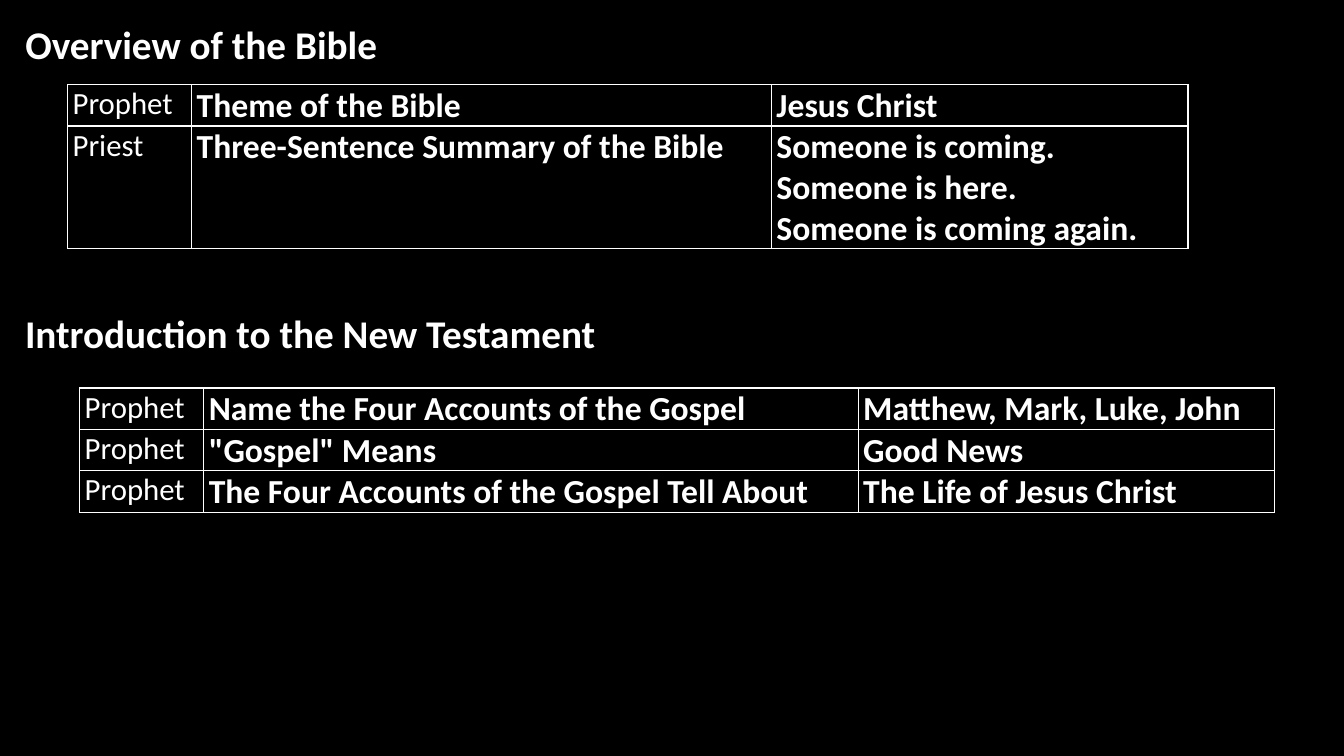
from dataclasses import dataclass

from lxml.etree import SubElement
from pptx import Presentation
from pptx.dml.color import RGBColor
from pptx.enum.text import MSO_ANCHOR as Anchor, MSO_AUTO_SIZE as AutoSize, PP_ALIGN as Align
from pptx.oxml.ns import qn
from pptx.util import Emu, Inches, Pt

WHITE = "FFFFFF"
BLACK = "000000"
FONT = "Calibri"
GRID = 100
LINE_ROWS = 5.4
OFFICE_COLUMNS = 9.23
ANSWER_COLUMNS = 31

deck = Presentation()
deck.slide_width, deck.slide_height = Inches(13.33), Inches(7.5)


@dataclass
class Heading:
    wording: str
    top: float
    width: float


@dataclass
class Topic:
    office: str
    prompt: str
    answers: list[str]


@dataclass
class Section:
    heading: Heading
    left: float
    top: float
    prompt_columns: float
    topics: list[Topic]


def columns(count: float) -> Emu:
    return Emu(round(deck.slide_width * count / GRID))


def rows(count: float) -> Emu:
    return Emu(round(deck.slide_height * count / GRID))


def colour(value: str) -> RGBColor:
    return RGBColor.from_string(value)


def write(frame, lines: list[str], size: int, bold: bool) -> None:
    for index, line in enumerate(lines):
        paragraph = frame.paragraphs[0] if index == 0 else frame.add_paragraph()
        paragraph.alignment = Align.LEFT
        run = paragraph.add_run()
        run.text = line
        run.font.name, run.font.size, run.font.bold = FONT, Pt(size), bold
        run.font.color.rgb = colour(WHITE)


def place_heading(holder, heading: Heading) -> None:
    holder.left, holder.top = columns(1.13), rows(heading.top)
    holder.width, holder.height = columns(heading.width), rows(7.6)
    frame = holder.text_frame
    frame.word_wrap = True
    frame.auto_size = AutoSize.SHAPE_TO_FIT_TEXT
    frame.vertical_anchor = Anchor.TOP
    write(frame, [heading.wording], 28, True)


def outline(cell) -> None:
    properties = cell._tc.get_or_add_tcPr()
    for side in ("a:lnL", "a:lnR", "a:lnT", "a:lnB"):
        border = SubElement(properties, qn(side), w=str(Pt(1)))
        SubElement(SubElement(border, qn("a:solidFill")), qn("a:srgbClr"), val=WHITE)


def fill_cell(cell, lines: list[str], size: int, bold: bool) -> None:
    cell.margin_left, cell.margin_bottom = Inches(0.05), 0
    cell.margin_top = cell.margin_right = Inches(0.01)
    cell.vertical_anchor = Anchor.TOP
    outline(cell)
    cell.fill.background()
    write(cell.text_frame, lines, size, bold)


def draw_topics(slide, section: Section) -> None:
    widths = [OFFICE_COLUMNS, section.prompt_columns, ANSWER_COLUMNS]
    heights = [LINE_ROWS * len(topic.answers) for topic in section.topics]
    grid = slide.shapes.add_table(
        len(heights), len(widths), columns(section.left), rows(section.top),
        columns(sum(widths)), rows(sum(heights))).table
    grid.first_row = grid.horz_banding = False
    for column, width in zip(grid.columns, widths):
        column.width = columns(width)
    for index, (topic, height) in enumerate(zip(section.topics, heights)):
        grid.rows[index].height = rows(height)
        fill_cell(grid.cell(index, 0), [topic.office], 22, False)
        fill_cell(grid.cell(index, 1), [topic.prompt], 24, True)
        fill_cell(grid.cell(index, 2), topic.answers, 24, True)


OVERVIEW = Section(Heading("Overview of the Bible", 2, 50.34), 5.03, 11.2, 43.14, [
    Topic("Prophet", "Theme of the Bible", ["Jesus Christ"]),
    Topic("Priest", "Three-Sentence Summary of the Bible",
          ["Someone is coming.", "Someone is here.", "Someone is coming again."]),
])
NEW_TESTAMENT = Section(
    Heading("Introduction to the New Testament", 40.27, 87.47), 5.93, 51.33, 48.69, [
        Topic("Prophet", "Name the Four Accounts of the Gospel", ["Matthew, Mark, Luke, John"]),
        Topic("Prophet", '"Gospel" Means', ["Good News"]),
        Topic("Prophet", "The Four Accounts of the Gospel Tell About",
              ["The Life of Jesus Christ"]),
    ])


def main() -> None:
    slide = deck.slides.add_slide(deck.slide_layouts.get_by_name("Title Only"))
    slide.background.fill.solid()
    slide.background.fill.fore_color.rgb = colour(BLACK)
    place_heading(slide.shapes.title, OVERVIEW.heading)
    draw_topics(slide, OVERVIEW)
    place_heading(slide.shapes.add_textbox(0, 0, 0, 0), NEW_TESTAMENT.heading)
    draw_topics(slide, NEW_TESTAMENT)
    deck.save("out.pptx")


if __name__ == "__main__":
    main()
